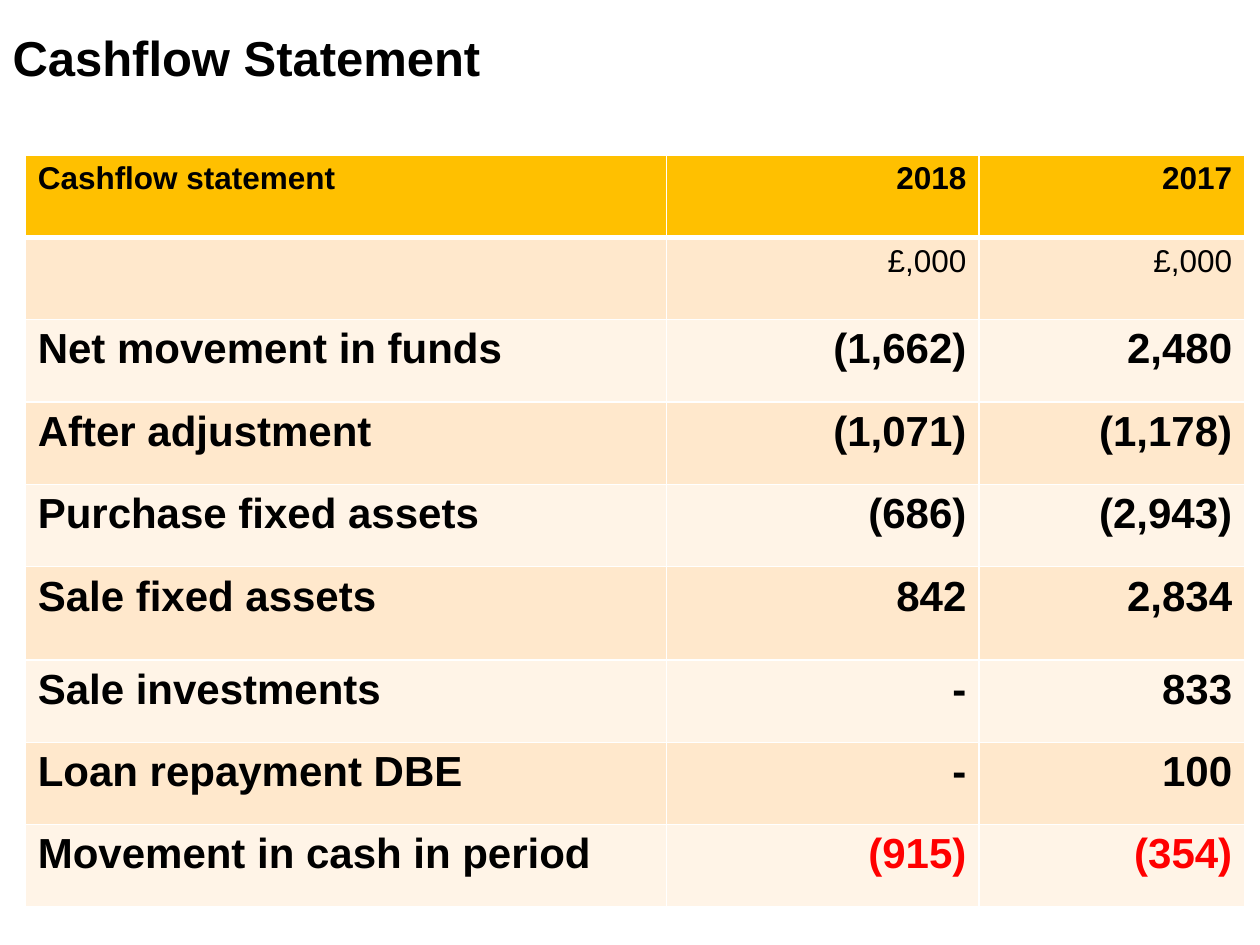
import pptx
import pptx.util
import pptx.dml.color
import pptx.enum.text
import pptx.oxml.ns
from lxml import etree

Inches = pptx.util.Inches
Pt = pptx.util.Pt
RGBColor = pptx.dml.color.RGBColor
PP_ALIGN = pptx.enum.text.PP_ALIGN
qn = pptx.oxml.ns.qn

BLACK = RGBColor(0x00, 0x00, 0x00)
WHITE = RGBColor(0xFF, 0xFF, 0xFF)
RED = RGBColor(0xFF, 0x00, 0x00)
AMBER = RGBColor(0xFF, 0xC0, 0x00)
PEACH = RGBColor(0xFF, 0xE8, 0xCC)
CREAM = RGBColor(0xFF, 0xF4, 0xE7)

ROWS = [
    ("Cashflow statement", "2018", "2017"),
    ("", "£,000", "£,000"),
    ("Net movement in funds", "(1,662)", "2,480"),
    ("After adjustment", "(1,071)", "(1,178)"),
    ("Purchase fixed assets", "(686)", "(2,943)"),
    ("Sale fixed assets", "842", "2,834"),
    ("Sale investments", "-", "833"),
    ("Loan repayment DBE", "-", "100"),
    ("Movement in cash in period", "(915)", "(354)"),
]
COLUMN_WIDTHS = [5.09, 2.48, 2.11]
TABLE_HEIGHT = 5.97
TALL_ROW, TALL_HEIGHT = 5, 0.74
ROW_HEIGHT = (TABLE_HEIGHT - TALL_HEIGHT) / (len(ROWS) - 1)


def write(tf, text, size=24, bold=True, color=BLACK, align=PP_ALIGN.LEFT,
          spacing=None, font="Arial"):
    p = tf.paragraphs[0]
    p.alignment = align
    p.line_spacing = spacing
    if text:
        r = p.add_run()
        r.text = text
        r.font.name = font
        r.font.size = Pt(size)
        r.font.bold = bold
        r.font.color.rgb = color


class Deck:
    def __init__(self):
        self.prs = pptx.Presentation()
        self.prs.slide_width = Inches(10)
        self.prs.slide_height = Inches(7.5)
        self.s = self.prs.slides.add_slide(self.prs.slide_layouts[5])

    def title(self, text, left, top, width, height):
        sp = self.s.shapes.title
        sp.left, sp.top = Inches(left), Inches(top)
        sp.width, sp.height = Inches(width), Inches(height)
        tf = sp.text_frame
        tf.word_wrap = True
        tf.auto_size = pptx.enum.text.MSO_AUTO_SIZE.NONE
        tf.vertical_anchor = pptx.enum.text.MSO_ANCHOR.TOP
        write(tf, text, size=28, spacing=0.9)

    def borders(self, cell, top=1, bottom=1):
        tcPr = cell._tc.get_or_add_tcPr()
        for side, width in (("L", 1), ("R", 1), ("T", top), ("B", bottom)):
            ln = etree.SubElement(tcPr, qn(f"a:ln{side}"), w=str(Pt(width)))
            fill = etree.SubElement(ln, qn("a:solidFill"))
            etree.SubElement(fill, qn("a:srgbClr"), val=str(WHITE))

    def cell(self, cell, text, row, col):
        self.borders(cell, top=3 if row == 1 else 1, bottom=3 if row == 0 else 1)
        cell.fill.solid()
        cell.fill.fore_color.rgb = AMBER if row == 0 else PEACH if row % 2 else CREAM
        write(cell.text_frame, text,
              size=18 if row < 2 else 24,
              bold=row != 1,
              color=RED if row == len(ROWS) - 1 and col else BLACK,
              align=PP_ALIGN.RIGHT if col else PP_ALIGN.LEFT)

    def table(self, rows, left, top):
        table = self.s.shapes.add_table(
            len(rows), len(COLUMN_WIDTHS), Inches(left), Inches(top),
            Inches(sum(COLUMN_WIDTHS)), Inches(TABLE_HEIGHT)).table
        for column, width in zip(table.columns, COLUMN_WIDTHS):
            column.width = Inches(width)
        for i, values in enumerate(rows):
            table.rows[i].height = Inches(TALL_HEIGHT if i == TALL_ROW else ROW_HEIGHT)
            for j, text in enumerate(values):
                self.cell(table.cell(i, j), text, i, j)


def main():
    deck = Deck()
    deck.title("Cashflow Statement", 0, 0.22, 8.12, 1.25)
    deck.table(ROWS, 0.2, 1.23)
    deck.prs.save("out.pptx")


if __name__ == "__main__":
    main()
